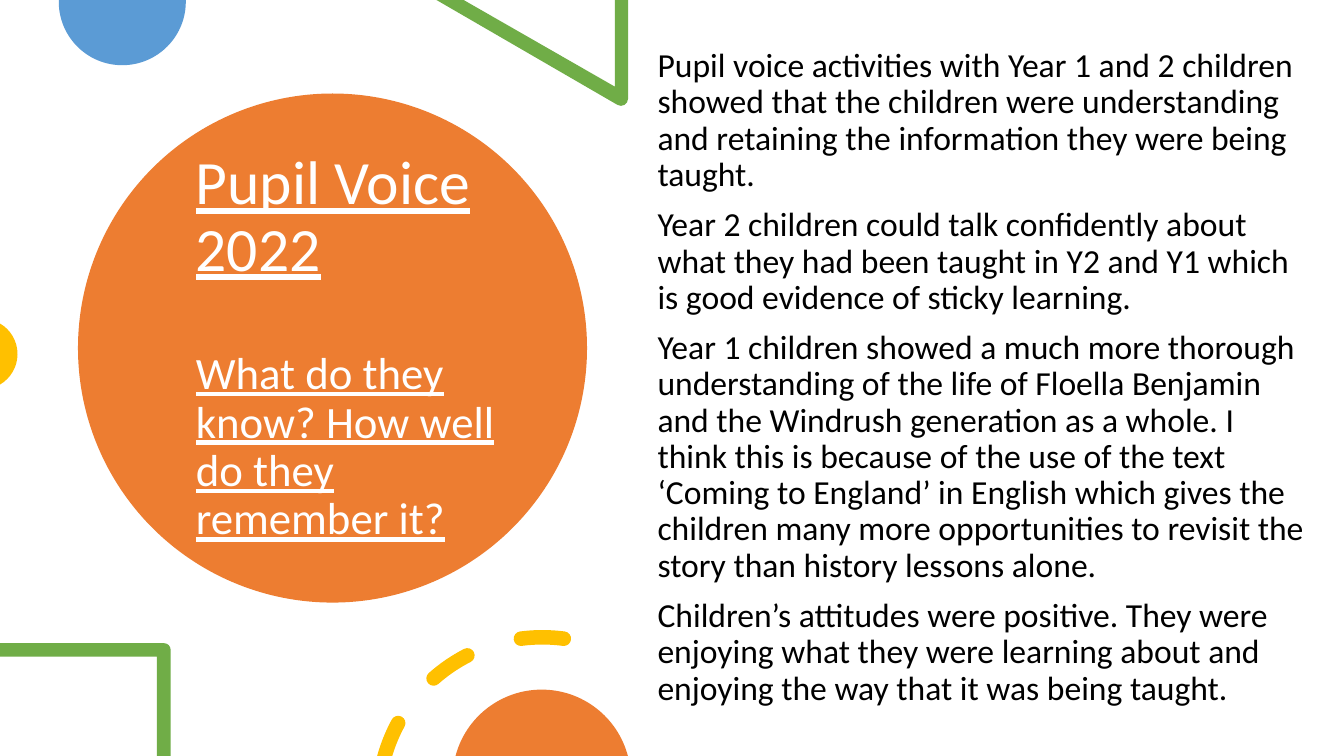
import math
from collections import namedtuple
from dataclasses import dataclass

import pptx
import pptx.dml.color
import pptx.enum.shapes
import pptx.enum.text
import pptx.oxml.ns
import pptx.util

Pt = pptx.util.Pt
qn = pptx.oxml.ns.qn
Box = namedtuple("Box", "left top width height")
Point = namedtuple("Point", "x y")
Curve = namedtuple("Curve", "control_1 control_2 end")


@dataclass(frozen=True)
class Theme:
    font: str = "Calibri"
    title_size: int = 44
    question_size: int = 32
    findings_size: int = 24
    line_spacing: float = 0.9
    orange: str = "ED7D31"
    blue: str = "5B9BD5"
    green: str = "70AD47"
    yellow: str = "FFC000"
    white: str = "FFFFFF"
    black: str = "000000"


THEME = Theme()

TITLE = "Pupil Voice 2022"
QUESTION = "What do they know? How well do they remember it?"
FINDINGS = [
    "Pupil voice activities with Year 1 and 2 children showed that the children "
    "were understanding and retaining the information they were being taught.",
    "Year 2 children could talk confidently about what they had been taught in "
    "Y2 and Y1 which is good evidence of sticky learning.",
    "Year 1 children showed a much more thorough understanding of the life of "
    "Floella Benjamin and the Windrush generation as a whole. I think this is "
    "because of the use of the text ‘Coming to England’ in English which gives "
    "the children many more opportunities to revisit the story than history "
    "lessons alone.",
    "Children’s attitudes were positive. They were enjoying what they were "
    "learning about and enjoying the way that it was being taught.",
]


def rgb(colour):
    return pptx.dml.color.RGBColor.from_string(colour)


def paint(shape, colour):
    shape.shadow.inherit = False
    shape.fill.solid()
    shape.fill.fore_color.rgb = rgb(colour)
    shape.line.fill.background()


def polar(centre, radius, angle):
    """Point at an angle in degrees, clockwise from east."""
    turn = math.radians(angle)
    return Point(centre.x + radius * math.cos(turn), centre.y + radius * math.sin(turn))


def arc(centre, radius, start, end, pieces=1):
    """Starting point of an arc, then its Bézier curves."""
    step = (end - start) / pieces
    handle = radius * 4 / 3 * math.tan(math.radians(step) / 4)
    steps = [Point(*polar(centre, radius, start))]
    for piece in range(pieces):
        first = start + piece * step
        last = first + step
        steps.append(Curve(polar(polar(centre, radius, first), handle, first + 90),
                           polar(polar(centre, radius, last), handle, last - 90),
                           polar(centre, radius, last)))
    return steps


def draw_outline(slide, contours, colour):
    """Fill contours made of Points and Curves, each starting with a Point."""
    to_emu = lambda point: (Pt(point.x), Pt(point.y))
    builder = slide.shapes.build_freeform(*to_emu(contours[0][0]))
    for number, (start, *steps) in enumerate(contours):
        if number:
            builder.move_to(*to_emu(start))
        for step in steps:
            ends = step if isinstance(step, Curve) else [step]
            builder.add_line_segments([to_emu(point) for point in ends], close=False)
        builder.add_line_segments([], close=True)
    shape = builder.convert_to_shape()
    lines = iter(list(shape._element.iter(qn("a:lnTo"))))
    for step in (step for contour in contours for step in contour[1:]):
        segment = next(lines)
        if isinstance(step, Curve):
            segment.tag = qn("a:cubicBezTo")
            for extra in (next(lines), next(lines)):
                segment.append(extra[0])
                extra.getparent().remove(extra)
    paint(shape, colour)


def add_cut_disc(slide, box, facing, colour):
    """Disc cut off by a slide edge; facing is the angle at which it bulges inwards."""
    sideways = facing % 180 == 0
    depth, chord = (box.width, box.height) if sideways else (box.height, box.width)
    radius = ((chord / 2) ** 2 + depth ** 2) / (2 * depth)
    sweep = math.degrees(math.acos((radius - depth) / radius))
    middle = Point(box.left + box.width / 2, box.top + box.height / 2)
    centre = polar(middle, depth / 2 - radius, facing)
    draw_outline(slide, [arc(centre, radius, facing - sweep, facing + sweep, 2)], colour)


def add_triangle_corner(slide, box):
    right, bottom = box.left + box.width, box.top + box.height
    band, corner = 9.4, 5
    outline = [Point(right, box.top), Point(right - band, box.top),
               Point(right - band, bottom - 13.7),
               Point(box.left + 19.4, box.top), Point(box.left, box.top)]
    outline += arc(Point(right - corner, bottom - corner), corner, 120, 0, 2)
    draw_outline(slide, [outline], THEME.green)


def add_square_corner(slide, box):
    right, bottom = box.left + box.width, box.top + box.height
    band, corner = 9.7, 4.7
    outline = [Point(box.left, box.top), Point(box.left, box.top + band),
               Point(right - band, box.top + band),
               Point(right - band, bottom), Point(right, bottom)]
    outline += arc(Point(right - corner, box.top + corner), corner, 0, -90)
    draw_outline(slide, [outline], THEME.green)


def add_dashed_ring(slide, box):
    radius, half = 117.2, 5.2
    outer, inner = radius + half, radius - half
    centre = Point(box.left + 119.6, box.top + outer)

    def cap(angle, turn):
        return arc(polar(centre, radius, angle), half, angle + turn, angle + turn + 180, 2)[1:]

    def edge_angle(r):
        """Angle at which a ring of radius r meets the bottom of the box."""
        return 180 + math.degrees(math.asin((centre.y - box.top - box.height) / r))

    cut_end = 208.5
    dashes = [arc(centre, outer, edge_angle(outer), cut_end) + cap(cut_end, 0)
              + arc(centre, inner, cut_end, edge_angle(inner))[1:]]
    for start, end in [(228.5, 242.8), (262.5, 277.5)]:
        dashes.append(arc(centre, outer, start, end) + cap(end, 0)
                      + arc(centre, inner, end, start)[1:] + cap(start, 180))
    draw_outline(slide, dashes, THEME.yellow)


def add_paragraphs(slide, box, entries, colour, anchor, underline=None):
    """Write entries of (text, size, space before) into a text box."""
    frame = slide.shapes.add_textbox(*map(Pt, box)).text_frame
    frame.word_wrap = True
    frame.vertical_anchor = anchor
    for number, (text, size, space_before) in enumerate(entries):
        paragraph = frame.add_paragraph() if number else frame.paragraphs[0]
        paragraph.text = text
        paragraph.line_spacing = THEME.line_spacing
        paragraph.space_before = Pt(space_before)
        font = paragraph.font
        font.name, font.size, font.color.rgb = THEME.font, Pt(size), rgb(colour)
        font.underline = underline


def add_title_circle(slide, box):
    circle = slide.shapes.add_shape(pptx.enum.shapes.MSO_SHAPE.OVAL, *map(Pt, box))
    paint(circle, THEME.orange)
    title_box = Box(box.left + 77.1, box.top + 21.6, 254.9, 320.4)
    entries = [(TITLE, THEME.title_size, 0), (QUESTION, THEME.question_size, 47.5)]
    add_paragraphs(slide, title_box, entries, THEME.white,
                   pptx.enum.text.MSO_ANCHOR.MIDDLE, underline=True)


def add_findings(slide, box):
    entries = [(text, THEME.findings_size, 10) for text in FINDINGS]
    add_paragraphs(slide, box, entries, THEME.black, pptx.enum.text.MSO_ANCHOR.TOP)


def main():
    deck = pptx.Presentation()
    deck.slide_width, deck.slide_height = Pt(960), Pt(540)
    slide = deck.slides.add_slide(deck.slide_layouts[6])
    add_title_circle(slide, Box(55.7, 66.8, 363.6, 363.6))
    add_cut_disc(slide, Box(42, 0, 90.7, 46.6), 90, THEME.blue)
    add_triangle_corner(slide, Box(311.8, 0, 136.8, 75.6))
    add_cut_disc(slide, Box(0, 231.1, 12.5, 43.6), 0, THEME.yellow)
    add_findings(slide, Box(462.6, 31.2, 480.2, 479.5))
    add_square_corner(slide, Box(0, 459.4, 121.9, 80.6))
    add_dashed_ring(slide, Box(267.8, 450, 139.7, 90))
    add_cut_disc(slide, Box(325.4, 492.6, 123.1, 47.4), 270, THEME.orange)
    deck.save("out.pptx")


if __name__ == "__main__":
    main()
